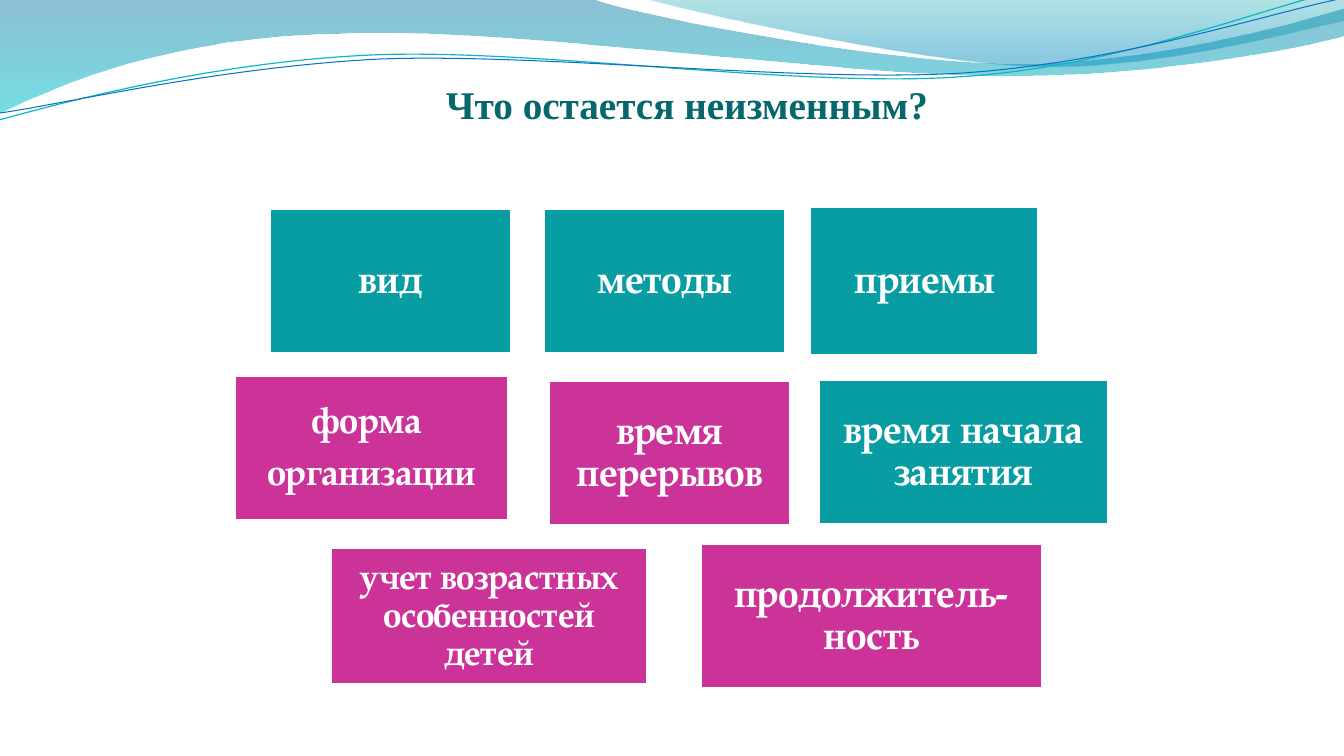
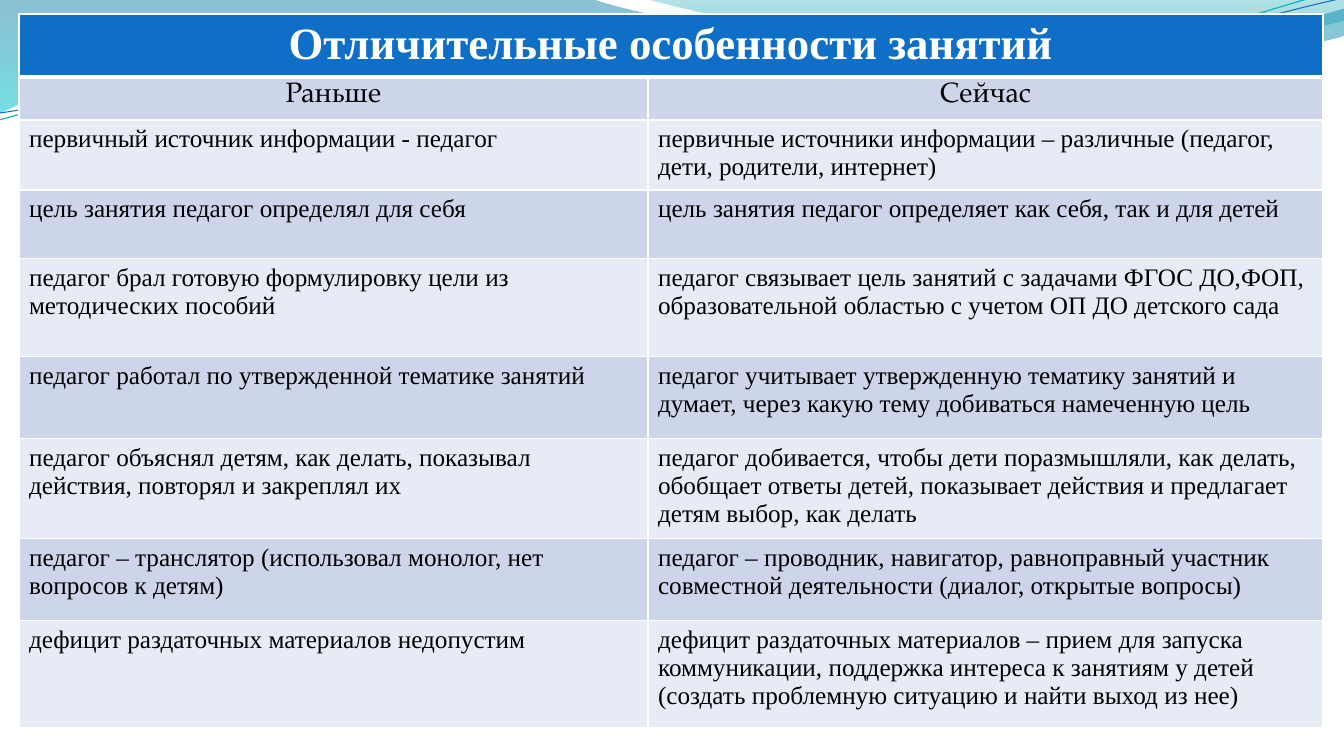
from lxml import etree
from pptx import Presentation
from pptx import util as u
from pptx.dml.color import RGBColor
from pptx.enum import shapes, text
from pptx.oxml.ns import qn

PX = 914400 / 100.8
SLIDE_WIDTH, SLIDE_HEIGHT = 1344, 756
TITLE_ONLY, BLANK = 5, 6

SERIF, PAGELLA = "Times New Roman", "TeX Gyre Pagella"

WHITE = RGBColor(0xFF, 0xFF, 0xFF)
BLACK = RGBColor(0x00, 0x00, 0x00)
DARK_TEAL = RGBColor(0x06, 0x68, 0x6C)
TEAL = RGBColor(0x08, 0x9C, 0xA3)
MAGENTA = RGBColor(0xCC, 0x33, 0x99)
BLUE = RGBColor(0x0F, 0x6F, 0xC6)
CYAN = RGBColor(0x0A, 0xB8, 0xBF)
BAND_DARK = RGBColor(0xCC, 0xD5, 0xEA)
BAND_LIGHT = RGBColor(0xE7, 0xEB, 0xF5)

# Wave outlines: a start point, then line (2 numbers) or curve (6 numbers) segments.
# Filled waves have gradient stops: position, colour, opacity in percent.
FILLED_WAVES = [
    ([(0, 0), (592, -1), (639, 17, 892, 64, 1019, 64),
      (1147, 64, 1288, 26, 1344, 9), (1346, 36),
      (1321, 44, 1169, 77, 1002, 76), (836, 76, 513, 28, 346, 34),
      (173, 36, 61, 84, -1, 114)],
     [(0, RGBColor(0x00, 0x74, 0xA1), 45), (1, RGBColor(0x00, 0xC6, 0xCF), 55)]),
    ([(644, -1), (684, 11, 916, 62, 1033, 66),
      (1150, 70, 1292, 32, 1344, 21), (1344, 0)],
     [(0, RGBColor(0x00, 0xA1, 0xA9), 30), (0.8, RGBColor(0x00, 0x8B, 0xBF), 45)]),
]
LINE_WAVES = [
    ([(-1, 120), (65, 102, 213, 62, 372, 55), (530, 48, 796, 88, 958, 77),
      (1119, 67, 1262, 8, 1342, -10)], CYAN, 0.85),
    ([(0, 113), (64, 104, 220, 67, 381, 59), (541, 53, 802, 83, 963, 73),
      (1124, 62, 1265, 14, 1344, -2)], BLUE, 0.75),
]

# Boxes: left, top, width, height, fill, text size, inset, lines
BOXES = [
    (270, 209, 241, 144, TEAL, 28, 12, ["вид"]),
    (544, 209, 241, 144, TEAL, 28, 12, ["методы"]),
    (810, 207, 229, 148, TEAL, 28, 12, ["приемы"]),
    (331, 548, 316, 136, MAGENTA, 25, 10, ["учет возрастных особенностей детей"]),
    (549, 381, 241, 144, MAGENTA, 28, 12, ["время перерывов"]),
    (819, 380, 289, 144, TEAL, 28, 12, ["время начала занятия"]),
    (235, 376, 273, 144, MAGENTA, 26, 11, ["форма ", "организации"]),
    (701, 544, 341, 144, MAGENTA, 28, 12, ["продолжитель-ность"]),
]

TABLE_TITLE = "Отличительные особенности занятий"
COLUMN_WIDTHS = [629, 675]
ROW_HEIGHTS = [63, 43, 70, 69, 98, 82, 100, 82, 107]
COMPARISON = [
    ("Раньше", "Сейчас"),
    ("первичный источник информации - педагог",
     "первичные источники информации – различные (педагог, дети, родители, интернет)"),
    ("цель занятия педагог определял для себя",
     "цель занятия педагог определяет как себя, так и для детей"),
    ("педагог брал готовую формулировку цели из методических пособий",
     "педагог связывает цель занятий с задачами ФГОС ДО,ФОП, "
     "образовательной областью с учетом ОП ДО детского сада"),
    ("педагог работал по утвержденной тематике занятий",
     "педагог учитывает утвержденную тематику занятий и думает, "
     "через какую тему добиваться намеченную цель"),
    ("педагог объяснял детям, как делать, показывал действия, "
     "повторял и закреплял их",
     "педагог добивается, чтобы дети поразмышляли, как делать, обобщает ответы детей, "
     "показывает действия и предлагает детям выбор, как делать"),
    ("педагог – транслятор (использовал монолог, нет вопросов к детям)",
     "педагог – проводник, навигатор, равноправный участник "
     "совместной деятельности (диалог, открытые вопросы)"),
    ("дефицит раздаточных материалов недопустим",
     "дефицит раздаточных материалов – прием для запуска коммуникации, "
     "поддержка интереса к занятиям у детей "
     "(создать проблемную ситуацию и найти выход из нее)"),
]


def px(value):
    return round(value * PX)


def write_text(frame, lines, size, font=SERIF, color=BLACK, bold=False,
               align=text.PP_ALIGN.LEFT, spacing=None, gap=0):
    """Fill a text frame, one paragraph a line, with gap points between them."""
    for index, line in enumerate(lines):
        paragraph = frame.add_paragraph() if index else frame.paragraphs[0]
        paragraph.alignment = align
        paragraph.line_spacing = spacing
        if index < len(lines) - 1:
            paragraph.space_after = u.Pt(gap)
        run = paragraph.add_run()
        run.text = line
        run.font.name, run.font.size, run.font.bold = font, u.Pt(size), bold
        run.font.color.rgb = color


def set_margins(frame, left, top, right, bottom):
    frame.margin_left, frame.margin_top = px(left), px(top)
    frame.margin_right, frame.margin_bottom = px(right), px(bottom)


# Waves
def add_wave(slide, outline, close):
    """Build the outline from straight segments, then bend the curved ones."""
    start, *segments = outline
    points = [(px(x), px(y)) for segment in segments
              for x, y in zip(segment[::2], segment[1::2])]
    builder = slide.shapes.build_freeform(*map(px, start), scale=1.0)
    builder.add_line_segments(points, close=close)
    shape = builder.convert_to_shape()
    shape.shadow.inherit = False

    lines = iter(shape.element.xpath(".//a:lnTo"))
    for segment in segments:
        line = next(lines)
        if len(segment) == 6:
            curve = etree.Element(qn("a:cubicBezTo"))
            line.addprevious(curve)
            for part in (line, next(lines), next(lines)):
                curve.append(part[0])
                part.getparent().remove(part)
    return shape


def add_filled_wave(slide, outline, stops):
    shape = add_wave(slide, outline, close=True)
    shape.line.fill.background()
    shape.fill.gradient()
    shape.fill.gradient_angle = 270
    for stop, (position, color, _) in zip(shape.fill.gradient_stops, stops):
        stop.position = position
        stop.color.rgb = color
    for node, (_, _, opacity) in zip(shape.element.xpath(".//a:gs/a:srgbClr"), stops):
        etree.SubElement(node, qn("a:alpha"), val=str(opacity * 1000))
    return shape


def add_line_wave(slide, outline, color, width):
    shape = add_wave(slide, outline, close=False)
    shape.fill.background()
    shape.line.color.rgb = color
    shape.line.width = u.Pt(width)
    return shape


def add_waves_to_master(presentation, slide):
    """Draw the waves on a slide, then move them to the back of the master."""
    waves = [add_filled_wave(slide, *wave) for wave in FILLED_WAVES]
    waves += [add_line_wave(slide, *wave) for wave in LINE_WAVES]
    tree = presentation.slide_master.shapes.element
    for index, wave in enumerate(waves):
        wave.element.nvSpPr.cNvPr.set("id", str(100 + index))
        tree.insert(2 + index, wave.element)


# Title and boxes
def set_title(slide, title):
    shape = slide.shapes.title
    shape.left, shape.top, shape.width, shape.height = map(px, (30, 46, 1314, 117))
    frame = shape.text_frame
    frame.vertical_anchor = text.MSO_ANCHOR.MIDDLE
    set_margins(frame, 0, 5, 0, 0)
    write_text(frame, [title], 28, color=DARK_TEAL, bold=True,
               align=text.PP_ALIGN.CENTER, spacing=0.9)


def add_box(slide, left, top, width, height, fill, size, inset, lines):
    shape = slide.shapes.add_shape(shapes.MSO_SHAPE.RECTANGLE,
                                   *map(px, (left, top, width, height)))
    shape.shadow.inherit = False
    shape.fill.solid()
    shape.fill.fore_color.rgb = fill
    shape.line.color.rgb = WHITE
    shape.line.width = u.Pt(2)
    frame = shape.text_frame
    frame.word_wrap = True
    frame.vertical_anchor = text.MSO_ANCHOR.MIDDLE
    set_margins(frame, *[inset] * 4)
    write_text(frame, lines, size, font=PAGELLA, color=WHITE, bold=True,
               align=text.PP_ALIGN.CENTER, spacing=0.9, gap=0.35 * size)


# Table: the default style draws the thin white borders
def fill_cell(cell, color):
    cell.fill.solid()
    cell.fill.fore_color.rgb = color


def add_header_borders(cell):
    properties = cell._tc.get_or_add_tcPr()
    sides = (("a:lnL", 1), ("a:lnR", 1), ("a:lnT", 1), ("a:lnB", 3))
    for index, (tag, width) in enumerate(sides):
        line = etree.Element(qn(tag), w=str(u.Pt(width)))
        solid = etree.SubElement(line, qn("a:solidFill"))
        etree.SubElement(solid, qn("a:srgbClr"), val=str(WHITE))
        properties.insert(index, line)


def add_comparison_table(slide):
    frame = slide.shapes.add_table(
        len(ROW_HEIGHTS), len(COLUMN_WIDTHS), px(19), px(14),
        px(sum(COLUMN_WIDTHS)), px(sum(ROW_HEIGHTS)))
    table = frame.table
    for column, width in zip(table.columns, COLUMN_WIDTHS):
        column.width = px(width)
    for row, height in zip(table.rows, ROW_HEIGHTS):
        row.height = px(height)

    header = table.cell(0, 0)
    header.merge(table.cell(0, 1))
    for cell in table.rows[0].cells:
        fill_cell(cell, BLUE)
        add_header_borders(cell)
    write_text(header.text_frame, [TABLE_TITLE], 32, color=WHITE, bold=True,
               align=text.PP_ALIGN.CENTER)

    label_style = dict(size=20, font=PAGELLA, align=text.PP_ALIGN.CENTER)
    for row, entries in enumerate(COMPARISON, start=1):
        style = label_style if row == 1 else dict(size=18)
        for column, entry in enumerate(entries):
            cell = table.cell(row, column)
            fill_cell(cell, BAND_DARK if row % 2 else BAND_LIGHT)
            write_text(cell.text_frame, [entry], **style)


def main():
    presentation = Presentation()
    presentation.slide_width = px(SLIDE_WIDTH)
    presentation.slide_height = px(SLIDE_HEIGHT)
    layouts = presentation.slide_layouts

    # What stays the same
    slide = presentation.slides.add_slide(layouts[TITLE_ONLY])
    add_waves_to_master(presentation, slide)
    set_title(slide, "Что остается неизменным?")
    for box in BOXES:
        add_box(slide, *box)

    # Before and now
    slide = presentation.slides.add_slide(layouts[BLANK])
    add_comparison_table(slide)

    presentation.save("out.pptx")


if __name__ == "__main__":
    main()
